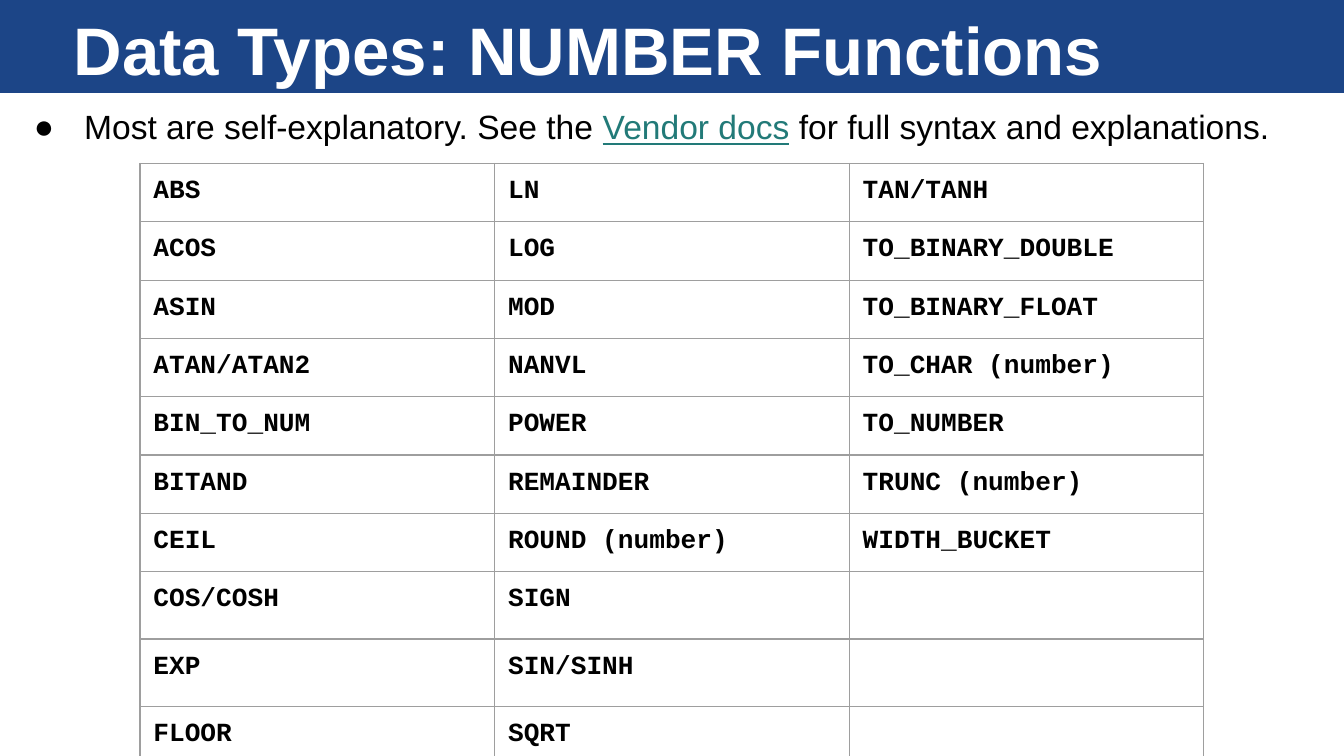
from typing import NamedTuple

from lxml import etree
from pptx import Presentation
from pptx.dml.color import RGBColor
from pptx.enum.shapes import MSO_SHAPE
from pptx.enum.text import MSO_ANCHOR
from pptx.oxml.ns import qn
from pptx.util import Pt

RECT = MSO_SHAPE.RECTANGLE
TOP, MIDDLE = MSO_ANCHOR.TOP, MSO_ANCHOR.MIDDLE
HEX = {"navy": "1C4587", "white": "FFFFFF", "black": "000000",
       "teal": "227A78", "grey": "9E9E9E"}
INSET = Pt(7.2)
COL_W, ROW_H = 190, 30.24
COLUMNS = [
    ["ABS", "ACOS", "ASIN", "ATAN/ATAN2", "BIN_TO_NUM", "BITAND", "CEIL",
     "COS/COSH", "EXP", "FLOOR"],
    ["LN", "LOG", "MOD", "NANVL", "POWER", "REMAINDER", "ROUND (number)",
     "SIGN", "SIN/SINH", "SQRT"],
    ["TAN/TANH", "TO_BINARY_DOUBLE", "TO_BINARY_FLOAT", "TO_CHAR (number)",
     "TO_NUMBER", "TRUNC (number)", "WIDTH_BUCKET"],
]


class Run(NamedTuple):
    text: str
    size: float
    color: str = "black"
    font: str = "Arial"
    bold: bool = False
    line: bool = False


class Box(NamedTuple):
    left: float
    top: float
    width: float
    height: float

    def pts(self) -> list:
        return [Pt(v) for v in self]


def rgb(name: str) -> RGBColor:
    return RGBColor.from_string(HEX[name])


def add_runs(para, runs: list[Run]) -> None:
    for item in runs:
        run = para.add_run()
        run.text = item.text
        font = run.font
        font.name, font.size = item.font, Pt(item.size)
        font.bold, font.underline = item.bold, item.line
        font.color.rgb = rgb(item.color)


def pad(target) -> None:
    """Give a cell or text frame the same inset on all sides."""
    target.margin_left = target.margin_right = INSET
    target.margin_top = target.margin_bottom = INSET


def add_text(slide, box: Box, runs: list[Run], anchor):
    frame = slide.shapes.add_textbox(*box.pts()).text_frame
    frame.word_wrap = True
    frame.vertical_anchor = anchor
    pad(frame)
    para = frame.paragraphs[0]
    add_runs(para, runs)
    return para


def set_bullet(para, indent: float, hang: float) -> None:
    props = para._p.get_or_add_pPr()
    props.set("marL", str(Pt(indent)))
    props.set("indent", str(-Pt(hang)))
    etree.SubElement(props, qn("a:buFont"), typeface="Arial")
    etree.SubElement(props, qn("a:buChar"), char="●")


def set_border(cell) -> None:
    props = cell._tc.get_or_add_tcPr()
    for spot, side in enumerate(("lnL", "lnR", "lnT", "lnB")):
        line = etree.Element(qn(f"a:{side}"), w=str(Pt(0.75)))
        fill = etree.SubElement(line, qn("a:solidFill"))
        etree.SubElement(fill, qn("a:srgbClr"), val=HEX["grey"])
        props.insert(spot, line)


def add_grid(slide, left: float, top: float) -> None:
    count = max(map(len, COLUMNS))
    box = Box(left, top, COL_W * len(COLUMNS), ROW_H * count)
    table = slide.shapes.add_table(count, len(COLUMNS), *box.pts()).table
    table.first_row = table.horz_banding = False
    for row in table.rows:
        row.height = Pt(ROW_H)
    for c, names in enumerate(COLUMNS):
        table.columns[c].width = Pt(COL_W)
        for r in range(count):
            cell = table.cell(r, c)
            pad(cell)
            cell.fill.background()
            set_border(cell)
            if r < len(names):
                add_runs(cell.text_frame.paragraphs[0],
                         [Run(names[r], 14, font="Courier New", bold=True)])


def main() -> None:
    deck = Presentation()
    deck.slide_width, deck.slide_height = Pt(720), Pt(405)
    slide = deck.slides.add_slide(deck.slide_layouts[6])

    band = slide.shapes.add_shape(RECT, *Box(0, 0, 720, 49.8).pts())
    band.shadow.inherit = False
    band.fill.solid()
    band.fill.fore_color.rgb = rgb("navy")
    band.line.fill.background()

    add_text(slide, Box(32.4, 2.9, 648, 46.8),
             [Run("Data Types: NUMBER Functions", 36, "white", bold=True)],
             MIDDLE)
    add_grid(slide, 75, 87.6)
    note = add_text(slide, Box(2, 49.8, 718, 36), [
        Run("Most are self-explanatory. See the ", 18),
        Run("Vendor docs", 18, "teal", line=True),
        Run(" for full syntax and explanations.", 18),
    ], TOP)
    set_bullet(note, 36, 27)
    deck.save("out.pptx")


if __name__ == "__main__":
    main()
